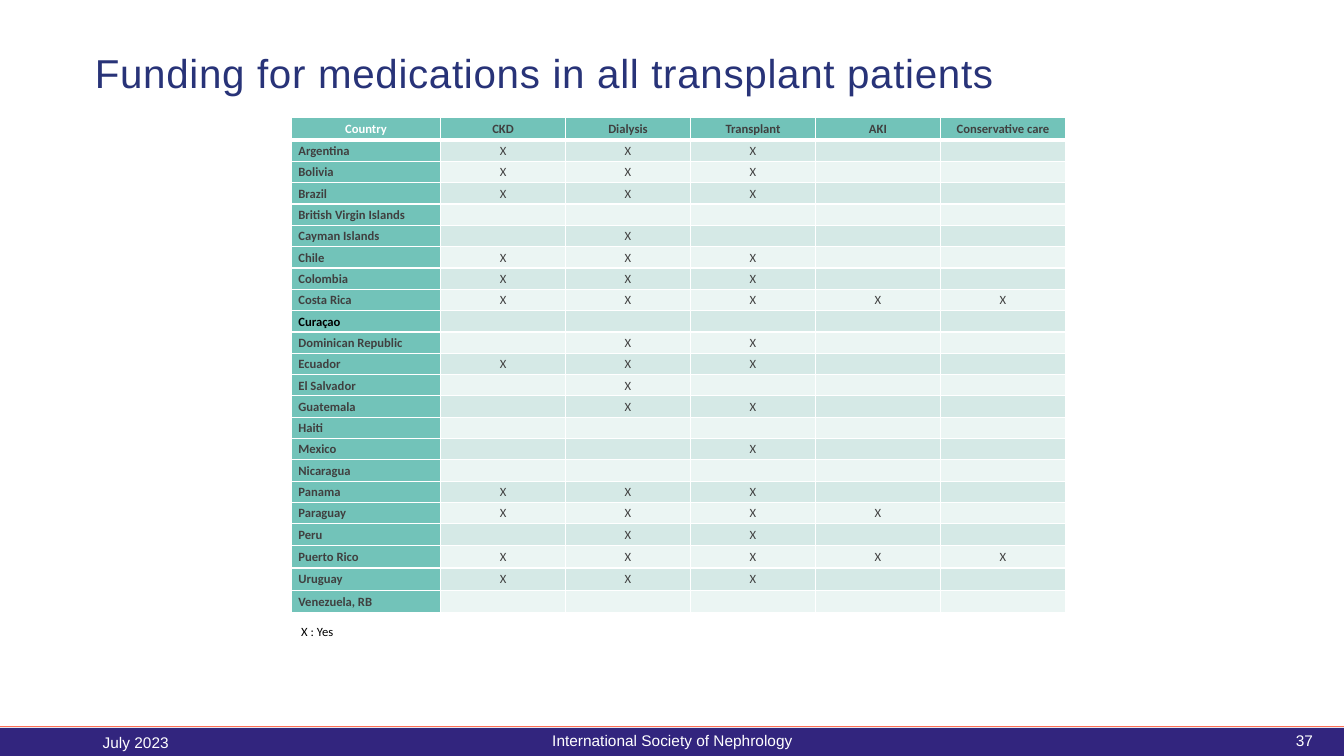
from lxml import etree
from pptx import Presentation
from pptx.dml.color import RGBColor
from pptx.enum.shapes import MSO_CONNECTOR, MSO_SHAPE
from pptx.enum.text import MSO_ANCHOR, MSO_AUTO_SIZE, PP_ALIGN
from pptx.oxml.ns import qn
from pptx.util import Inches, Pt

LEFT, CENTER, RIGHT = PP_ALIGN.LEFT, PP_ALIGN.CENTER, PP_ALIGN.RIGHT
TOP, MIDDLE = MSO_ANCHOR.TOP, MSO_ANCHOR.MIDDLE
RECTANGLE, STRAIGHT = MSO_SHAPE.RECTANGLE, MSO_CONNECTOR.STRAIGHT
NO_AUTOFIT, GROW = MSO_AUTO_SIZE.NONE, MSO_AUTO_SIZE.SHAPE_TO_FIT_TEXT
TITLE_ONLY = 5

WHITE, BLACK, GREY = "FFFFFF", "000000", "404040"
NAVY, PURPLE, CORAL = "283378", "32257E", "FE7055"
TEAL, BANDS = "72C3B9", ("D5E9E6", "EBF5F3")

HEADERS = ["Country", "CKD", "Dialysis", "Transplant", "AKI", "Conservative care"]
# One mark per column after the country: X for yes, - for an empty cell.
FUNDING = {
    "Argentina": "XXX--",
    "Bolivia": "XXX--",
    "Brazil": "XXX--",
    "British Virgin Islands": "-----",
    "Cayman Islands": "-X---",
    "Chile": "XXX--",
    "Colombia": "XXX--",
    "Costa Rica": "XXXXX",
    "Curaçao": "-----",
    "Dominican Republic": "-XX--",
    "Ecuador": "XXX--",
    "El Salvador": "-X---",
    "Guatemala": "-XX--",
    "Haiti": "-----",
    "Mexico": "--X--",
    "Nicaragua": "-----",
    "Panama": "XXX--",
    "Paraguay": "XXXX-",
    "Peru": "-XX--",
    "Puerto Rico": "XXXXX",
    "Uruguay": "XXX--",
    "Venezuela, RB": "-----",
}
COLUMN_WIDTHS = [11.1] + [9.3] * 5
ROW_HEIGHTS = [3.07] + [2.82] * 18 + [2.93] * 4


def color(value):
    return RGBColor.from_string(value)


class FundingSlide:
    """Draws on one slide; lengths are percent of its width and height."""

    def __init__(self, presentation):
        self.width = presentation.slide_width
        self.height = presentation.slide_height
        self.slide = presentation.slides.add_slide(
            presentation.slide_layouts[TITLE_ONLY])
        self.shapes = self.slide.shapes

    def across(self, share):
        return round(self.width * share / 100)

    def down(self, share):
        return round(self.height * share / 100)

    def area(self, left, top, width, height):
        return (self.across(left), self.down(top),
                self.across(width), self.down(height))

    def style(self, paragraph, size, ink, font="Arial", align=LEFT, bold=False):
        paragraph.alignment = align
        paragraph.font.name = font
        paragraph.font.size = Pt(size)
        paragraph.font.bold = bold
        paragraph.font.color.rgb = color(ink)

    def title(self, text, area):
        shape = self.shapes.title
        shape.left, shape.top, shape.width, shape.height = self.area(*area)
        frame = shape.text_frame
        frame.text = text
        frame.auto_size = NO_AUTOFIT
        frame.vertical_anchor = MIDDLE
        paragraph = frame.paragraphs[0]
        paragraph.line_spacing = 0.9
        self.style(paragraph, 28.8, NAVY)
        paragraph.runs[0]._r.get_or_add_rPr().set("spc", "50")

    def bar(self, area, fill):
        shape = self.shapes.add_shape(RECTANGLE, *self.area(*area))
        shape.shadow.inherit = False
        shape.fill.solid()
        shape.fill.fore_color.rgb = color(fill)
        shape.line.fill.background()

    def rule(self, top, ink):
        line = self.shapes.add_connector(
            STRAIGHT, 0, self.down(top), self.width, self.down(top))
        line.line.color.rgb = color(ink)
        line.line.width = Pt(0.75)
        etree.SubElement(line._element.spPr, qn("a:effectLst"))

    def text(self, text, area, size=11, ink=WHITE, font="Arial", align=LEFT,
             anchor=MIDDLE, fit=NO_AUTOFIT):
        frame = self.shapes.add_textbox(*self.area(*area)).text_frame
        frame.word_wrap = True
        frame.auto_size = fit
        frame.vertical_anchor = anchor
        frame.text = text
        self.style(frame.paragraphs[0], size, ink, font, align)

    def borders(self, cell, bottom):
        properties = cell._tc.get_or_add_tcPr()
        for side, points in (("L", 1), ("R", 1), ("T", 1), ("B", bottom)):
            line = etree.SubElement(properties, qn(f"a:ln{side}"), w=str(Pt(points)))
            fill = etree.SubElement(line, qn("a:solidFill"))
            etree.SubElement(fill, qn("a:srgbClr"), val=WHITE)

    def cell(self, cell, text, fill, ink, align, bold, bottom):
        self.borders(cell, bottom)
        cell.fill.solid()
        cell.fill.fore_color.rgb = color(fill)
        cell.margin_left = cell.margin_right = Inches(0.07)
        cell.margin_top = cell.margin_bottom = 0
        cell.vertical_anchor = MIDDLE
        paragraph = cell.text_frame.paragraphs[0]
        paragraph.line_spacing = 1.07
        self.style(paragraph, 9, ink, "Calibri", align, bold)
        if text:
            paragraph.add_run().text = text
        else:
            etree.SubElement(paragraph._p, qn("a:endParaRPr"), sz="900")

    def table(self, left, top):
        area = self.area(left, top, sum(COLUMN_WIDTHS), sum(ROW_HEIGHTS))
        table = self.shapes.add_table(
            len(ROW_HEIGHTS), len(COLUMN_WIDTHS), *area).table
        for column, width in zip(table.columns, COLUMN_WIDTHS):
            column.width = self.across(width)
        for row, height in zip(table.rows, ROW_HEIGHTS):
            row.height = self.down(height)
        for index, header in enumerate(HEADERS):
            ink = GREY if index else WHITE
            self.cell(table.cell(0, index), header, TEAL, ink, CENTER, True, 3)
        for row, (country, marks) in enumerate(FUNDING.items(), 1):
            ink = BLACK if country == "Curaçao" else GREY
            self.cell(table.cell(row, 0), country, TEAL, ink, LEFT, True, 1)
            band = BANDS[(row - 1) % 2]
            for column, mark in enumerate(marks, 1):
                self.cell(table.cell(row, column), mark.strip("-"), band,
                          GREY, CENTER, False, 1)


def main():
    presentation = Presentation()
    presentation.slide_width = Inches(13.33)
    presentation.slide_height = Inches(7.5)
    slide = FundingSlide(presentation)
    slide.bar((0, 96.27, 100, 3.73), PURPLE)
    slide.rule(96.13, CORAL)
    slide.title("Funding for medications in all transplant patients",
                (6.3, 5.2, 69.47, 9.47))
    slide.table(21.68, 15.47)
    slide.text("X : Yes", (21.68, 81.87, 5.63, 3.33), 9, BLACK, "Calibri",
               anchor=TOP, fit=GROW)
    slide.text("July 2023", (6.9, 96.27, 15.45, 5.33), anchor=TOP)
    slide.text("International Society of Nephrology",
               (33.16, 95.33, 33.76, 5.33), align=CENTER)
    slide.text("37", (70.67, 95.33, 27.76, 5.33), align=RIGHT)
    presentation.save("out.pptx")


if __name__ == "__main__":
    main()
